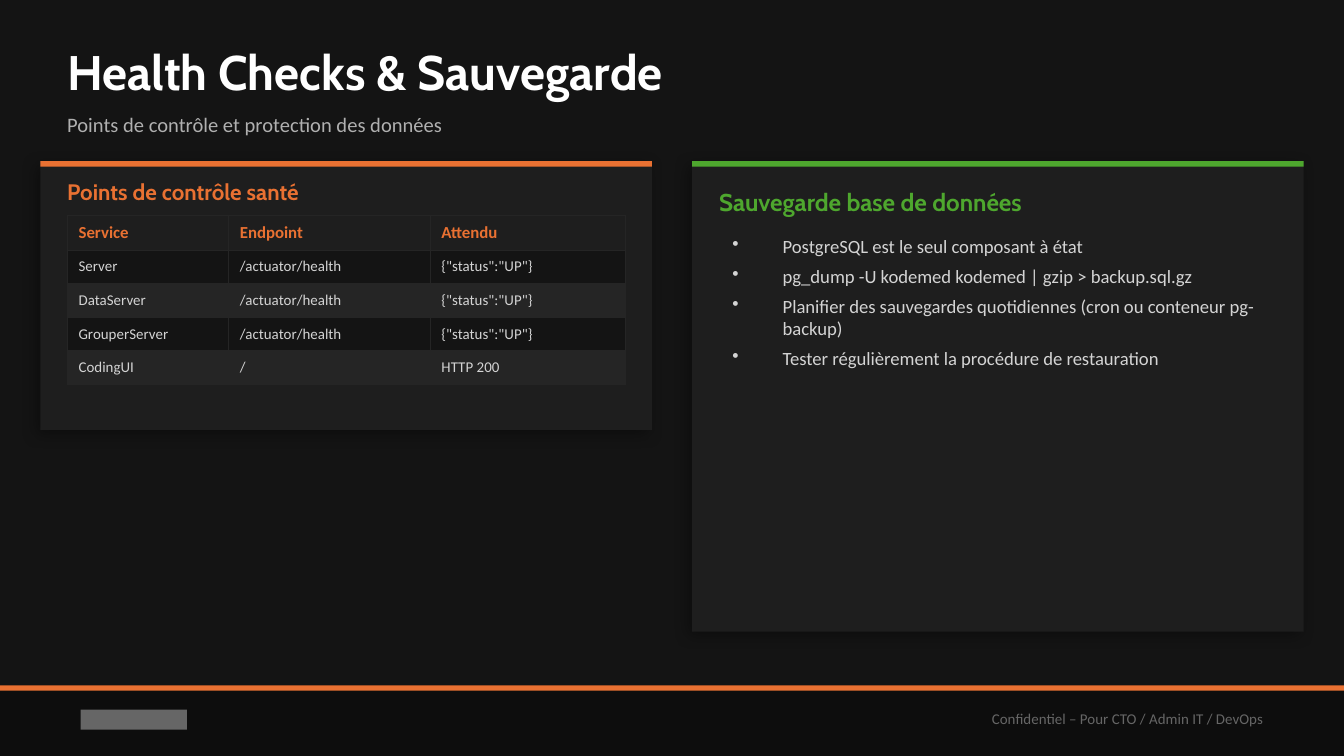
from lxml import etree
from pptx import Presentation
from pptx import util as u
from pptx.dml.color import RGBColor
from pptx.enum import shapes, text
from pptx.oxml import parse_xml
from pptx.oxml.ns import nsdecls, qn

PX = 4572  # EMU per px, 200 px to the inch
THEME = {
    "background": "141414", "card": "1E1E1E", "stripe": "252525", "footer": "0D0D0D",
    "orange": "E97132", "green": "4EA72E", "white": "FFFFFF", "body": "D4D4D4",
    "subtitle": "B0B0B0", "muted": "666666",
    "heading_font": "Cabin", "body_font": "Calibri",
    "title_size": 26, "subtitle_size": 11, "bullet_size": 10,
    "header_size": 9, "cell_size": 8, "footer_size": 8,
    "left_heading_size": 12, "right_heading_size": 13,
}

presentation = Presentation()
presentation.slide_width = 2000 * PX
presentation.slide_height = 1125 * PX
slide = presentation.slides.add_slide(presentation.slide_layouts[6])
slide.background.fill.solid()
slide.background.fill.fore_color.rgb = RGBColor.from_string(THEME["background"])


def add_block(left, top, width, height, color):
    shape = slide.shapes.add_shape(
        shapes.MSO_SHAPE.RECTANGLE, left * PX, top * PX, width * PX, height * PX)
    shape.shadow.inherit = False
    shape.fill.solid()
    shape.fill.fore_color.rgb = RGBColor.from_string(THEME[color])
    shape.line.fill.background()
    return shape


def add_text(box, lines, size, font, color, bold=False, inset=False):
    """Add a text box with one paragraph per line, all in one style."""
    left, top, width, height = (length * PX for length in box)
    frame = slide.shapes.add_textbox(left, top, width, height).text_frame
    frame.word_wrap = True
    frame.vertical_anchor = text.MSO_ANCHOR.MIDDLE
    if not inset:
        frame.margin_left = frame.margin_right = frame.margin_top = frame.margin_bottom = 0
    frame.text = "\n".join(lines)
    for paragraph in frame.paragraphs:
        run_font = paragraph.runs[0].font
        run_font.size = u.Pt(THEME[size])
        run_font.name = THEME[font]
        run_font.bold = bold
        run_font.color.rgb = RGBColor.from_string(THEME[color])
    return frame


# Footer, with a plain block in the company's place
add_block(0, 1020, 2000, 105, "footer")
add_block(0, 1020, 2000, 8, "orange")
add_block(120, 1056, 158, 30, "muted")
notice = add_text((1100, 1030, 800, 80), ["Confidentiel – Pour CTO / Admin IT / DevOps"],
                  "footer_size", "body_font", "muted", inset=True)
notice.paragraphs[0].alignment = text.PP_ALIGN.RIGHT

# Title and subtitle
add_text((100, 50, 1800, 110), ["Health Checks & Sauvegarde"],
         "title_size", "heading_font", "white", bold=True)
add_text((100, 150, 1800, 70), ["Points de contrôle et protection des données"],
         "subtitle_size", "body_font", "subtitle")

# Cards: left, height, accent, heading, heading top, heading height, heading size
cards = [
    (60, 400, "orange", "Points de contrôle santé", 260, 50, "left_heading_size"),
    (1030, 700, "green", "Sauvegarde base de données", 270, 60, "right_heading_size"),
]
for left, height, accent, heading, heading_top, heading_height, size in cards:
    card = add_block(left, 240, 910, height, "card")
    effects = card._element.spPr.find(qn("a:effectLst"))
    effects.append(parse_xml(
        f'<a:outerShdw {nsdecls("a")} blurRad="{u.Pt(8)}" dist="{u.Pt(3)}" dir="8100000" '
        'algn="bl" rotWithShape="0"><a:srgbClr val="000000"><a:alpha val="35000"/>'
        '</a:srgbClr></a:outerShdw>'))
    add_block(left, 240, 910, 8, accent)
    add_text((left + 40, heading_top, 830, heading_height), [heading],
             size, "heading_font", accent, bold=True)

# Health check table
rows = [
    ("Service", "Endpoint", "Attendu"),
    ("Server", "/actuator/health", '{"status":"UP"}'),
    ("DataServer", "/actuator/health", '{"status":"UP"}'),
    ("GrouperServer", "/actuator/health", '{"status":"UP"}'),
    ("CodingUI", "/", "HTTP 200"),
]
table = slide.shapes.add_table(5, 3, 100 * PX, 320 * PX, 830 * PX, 252 * PX).table
for column, width in zip(table.columns, (240, 300, 290)):
    column.width = width * PX
for row_index, row in enumerate(rows):
    header = row_index == 0
    fill = "card" if header else ("background" if row_index % 2 else "stripe")
    table.rows[row_index].height = (52 if header else 50) * PX
    for column_index, words in enumerate(row):
        cell = table.cell(row_index, column_index)
        cell.margin_left = cell.margin_right = 17 * PX
        cell.margin_top = cell.margin_bottom = 11 * PX
        cell.vertical_anchor = text.MSO_ANCHOR.MIDDLE
        for side in ("lnL", "lnR", "lnT", "lnB"):
            cell._tc.get_or_add_tcPr().append(parse_xml(
                f'<a:{side} {nsdecls("a")} w="{u.Pt(0.5)}"><a:solidFill>'
                f'<a:srgbClr val="{THEME["stripe"]}"/></a:solidFill></a:{side}>'))
        cell.fill.solid()
        cell.fill.fore_color.rgb = RGBColor.from_string(THEME[fill])
        cell.text_frame.text = words
        font = cell.text_frame.paragraphs[0].runs[0].font
        font.name = THEME["body_font"]
        font.size = u.Pt(THEME["header_size" if header else "cell_size"])
        font.bold = header
        font.color.rgb = RGBColor.from_string(THEME["orange" if header else "body"])

# Backup bullets
bullets = [
    "PostgreSQL est le seul composant à état",
    "pg_dump -U kodemed kodemed | gzip > backup.sql.gz",
    "Planifier des sauvegardes quotidiennes (cron ou conteneur pg-backup)",
    "Tester régulièrement la procédure de restauration",
]
backup = add_text((1070, 340, 830, 560), bullets,
                  "bullet_size", "body_font", "body", inset=True)
backup.vertical_anchor = text.MSO_ANCHOR.TOP
for paragraph in backup.paragraphs:
    properties = paragraph._p.get_or_add_pPr()
    properties.set("marL", str(75 * PX))
    properties.set("indent", str(-75 * PX))
    etree.SubElement(properties, qn("a:buSzPct"), val="100000")
    etree.SubElement(properties, qn("a:buChar"), char="•")
    paragraph.space_after = u.Pt(4)

presentation.save("out.pptx")
